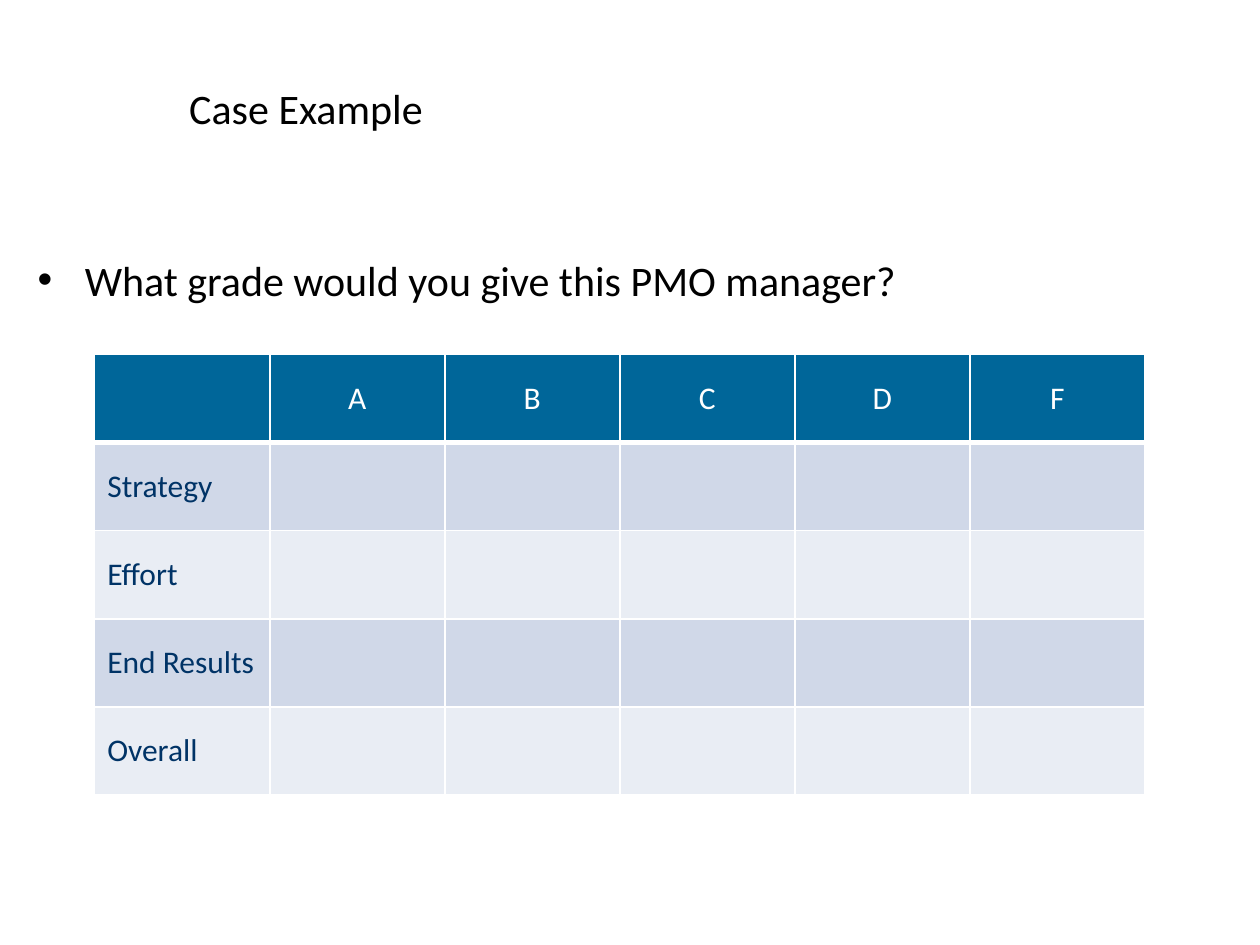
from dataclasses import dataclass

from lxml.etree import SubElement as Sub
from pptx import Presentation
from pptx.dml.color import RGBColor as Rgb
from pptx.enum.text import MSO_ANCHOR as Anchor, PP_ALIGN as Align
from pptx.oxml.ns import qn
from pptx.util import Cm, Pt


@dataclass(frozen=True)
class Theme:
    font: str = "Calibri"
    black: str = "000000"
    white: str = "FFFFFF"
    head: str = "006699"
    label: str = "003366"
    bands: tuple = ("D0D8E8", "E9EDF4")
    large: int = 24
    small: int = 18


THEME = Theme()
GRADES = ["A", "B", "C", "D", "F"]
TOPICS = ["Strategy", "Effort", "End Results", "Overall"]


def write(frame, text, size=THEME.large, color=THEME.black,
          align=Align.LEFT, anchor=Anchor.MIDDLE, bullet=None):
    frame.word_wrap = True
    frame.vertical_anchor = anchor
    para = frame.paragraphs[0]
    para.alignment = align
    if bullet:
        props = para._p.get_or_add_pPr()
        props.set("marL", str(Cm(0.95)))
        props.set("indent", str(Cm(-0.95)))
        Sub(props, qn("a:buFont"), typeface="Arial")
        Sub(props, qn("a:buChar"), char=bullet)
    run = para.add_run()
    run.text = text
    font = run.font
    font.name, font.size, font.bold = THEME.font, Pt(size), False
    font.color.rgb = Rgb.from_string(color)


def place(shape, left, top, width, height):
    shape.left, shape.top = Cm(left), Cm(top)
    shape.width, shape.height = Cm(width), Cm(height)


def edge(cell, **widths):
    props = cell._tc.get_or_add_tcPr()
    for side in "LRTB":
        line = Sub(props, qn(f"a:ln{side}"), w=str(Pt(widths.get(side, 1))))
        fill = Sub(line, qn("a:solidFill"))
        Sub(fill, qn("a:srgbClr"), val=THEME.white)


def paint(cell, color):
    cell.fill.solid()
    cell.fill.fore_color.rgb = Rgb.from_string(color)


def add_grid(slide, left, top, width, height):
    rows, cols = len(TOPICS) + 1, len(GRADES) + 1
    grid = slide.shapes.add_table(
        rows, cols, Cm(left), Cm(top), Cm(width), Cm(height)).table

    # Borders and banded fills
    for row in range(rows):
        for col in range(cols):
            cell = grid.cell(row, col)
            edge(cell, B=1 if row else 3)
            paint(cell, THEME.bands[(row - 1) % 2] if row else THEME.head)

    # Grades across the top, topics down the side
    for col, grade in enumerate(GRADES, 1):
        cell = grid.cell(0, col)
        cell.vertical_anchor = Anchor.MIDDLE
        write(cell.text_frame, grade, size=THEME.small, color=THEME.white,
              align=Align.CENTER)
    for row, topic in enumerate(TOPICS, 1):
        cell = grid.cell(row, 0)
        cell.vertical_anchor = Anchor.MIDDLE
        write(cell.text_frame, topic, size=THEME.small, color=THEME.label)


def main():
    deck = Presentation()
    deck.slide_width, deck.slide_height = Cm(25.4), Cm(19.05)
    slide = deck.slides.add_slide(deck.slide_layouts[5])

    # Title
    title = slide.shapes.title
    place(title, 3.56, 1.02, 20.98, 2.29)
    write(title.text_frame, "Case Example")

    # Question
    box = slide.shapes.add_textbox(Cm(0.51), Cm(5), Cm(24.89), Cm(11.25))
    write(box.text_frame, "What grade would you give this PMO manager?",
          anchor=Anchor.TOP, bullet="•")

    # Grade table
    add_grid(slide, 1.91, 7.14, 21.17, 8.89)

    deck.save("out.pptx")


if __name__ == "__main__":
    main()
